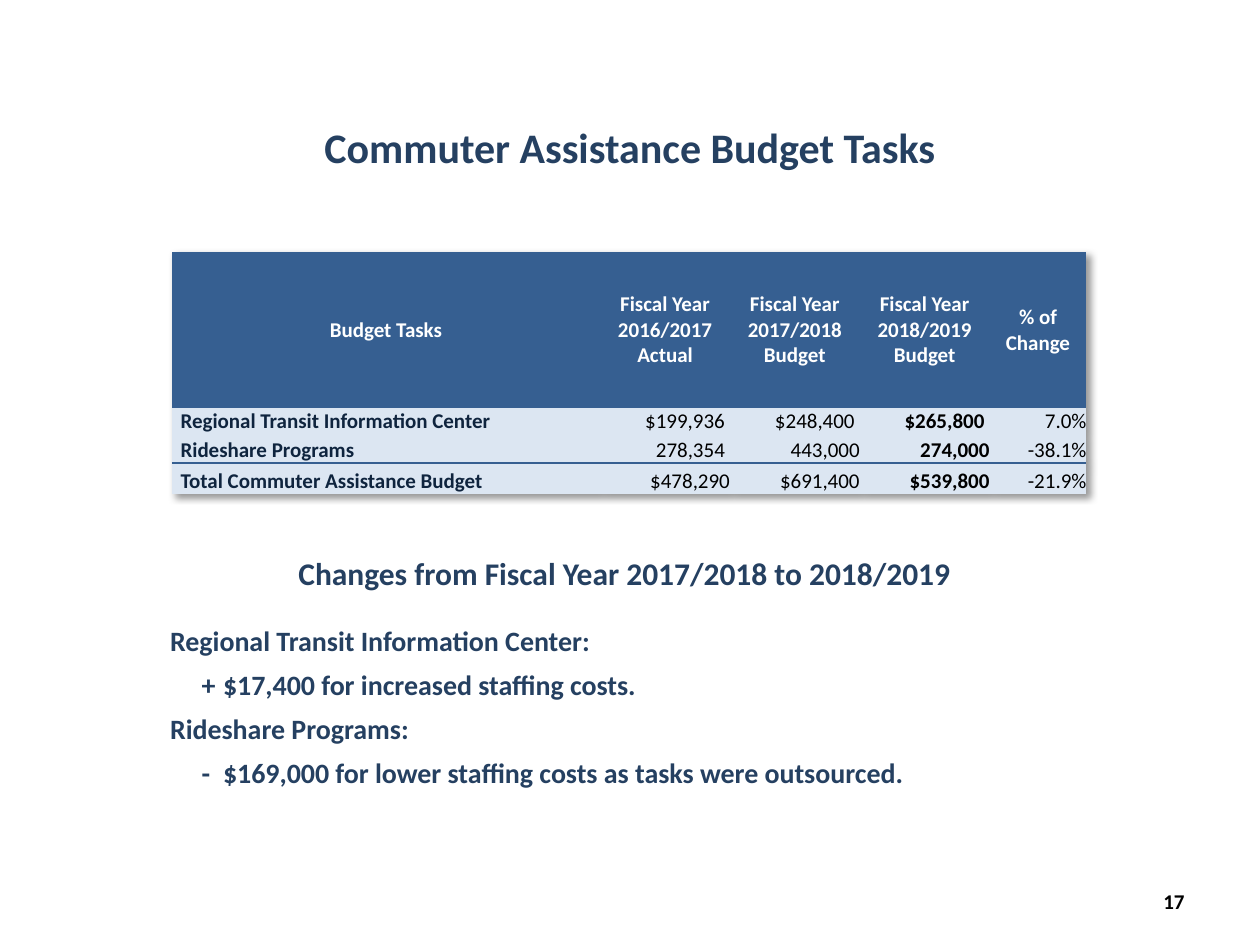
from dataclasses import dataclass

import pptx
import pptx.dml.color
import pptx.enum.text
import pptx.oxml
import pptx.oxml.ns
import pptx.util
from lxml import etree

RGBColor = pptx.dml.color.RGBColor
Align = pptx.enum.text.PP_ALIGN
Anchor = pptx.enum.text.MSO_ANCHOR

NAVY = RGBColor(0x25, 0x40, 0x61)
DARK_NAVY = RGBColor(0x0F, 0x24, 0x3E)
HEADER_BLUE = RGBColor(0x36, 0x5F, 0x91)
PALE_BLUE = RGBColor(0xDC, 0xE6, 0xF2)
WHITE = RGBColor(0xFF, 0xFF, 0xFF)
BLACK = RGBColor(0, 0, 0)

FONT = "Calibri"
SLIDE_WIDTH = pptx.util.Inches(10)
SLIDE_HEIGHT = pptx.util.Inches(7.5)
GRID_UNIT = SLIDE_WIDTH / 120  # 120 columns by 90 rows

COLUMN_WIDTHS = (40.8, 12.36, 12.36, 12.36, 9.24)
ROW_HEIGHTS = (14.88, 2.16, 2.76, 3)
NO_GRID_STYLE = "{2D5ABB26-0587-4C30-8999-92F81FD0307C}"
DRAWING = pptx.oxml.ns.nsdecls("a")


@dataclass(frozen=True)
class Box:
    """A position and size in grid columns and rows."""
    left: float
    top: float
    width: float
    height: float

    def lengths(self) -> list[int]:
        return [grid(value) for value in (self.left, self.top, self.width, self.height)]


@dataclass(frozen=True)
class TextStyle:
    size: float
    color: RGBColor
    bold: bool = True


@dataclass(frozen=True)
class BudgetRow:
    task: str
    amounts: tuple[str, str, str]
    change: str
    indented_amounts: int = 0  # leading amounts set in from the right edge


HEADERS = (
    ("Budget Tasks",),
    ("Fiscal Year 2016/2017", "Actual"),
    ("Fiscal Year 2017/2018", "Budget"),
    ("Fiscal Year 2018/2019", "Budget"),
    ("% of Change",),
)
BUDGET_ROWS = (
    BudgetRow("Regional Transit Information Center",
              ("$199,936", "$248,400", "$265,800"), "7.0%", 3),
    BudgetRow("Rideshare Programs", ("278,354", "443,000", "274,000"), "-38.1%", 1),
    BudgetRow("Total Commuter Assistance Budget",
              ("$478,290", "$691,400", "$539,800"), "-21.9%"),
)
CHANGES = (
    ("Regional Transit Information Center:", "+\t$17,400 for increased staffing costs."),
    ("Rideshare Programs:", "-\t$169,000 for lower staffing costs as tasks were outsourced."),
)


def grid(units: float) -> int:
    return round(units * GRID_UNIT)


def place(shape, box: Box) -> None:
    shape.left, shape.top, shape.width, shape.height = box.lengths()


def next_paragraph(text_frame, is_first: bool):
    return text_frame.paragraphs[0] if is_first else text_frame.add_paragraph()


def add_run(paragraph, text: str, style: TextStyle) -> None:
    run = paragraph.add_run()
    run.text = text
    run.font.name = FONT
    run.font.size = pptx.util.Pt(style.size)
    run.font.bold = style.bold
    run.font.color.rgb = style.color


def write_line(shape, text: str, style: TextStyle, alignment, anchor) -> None:
    text_frame = shape.text_frame
    text_frame.word_wrap = True
    text_frame.auto_size = pptx.enum.text.MSO_AUTO_SIZE.NONE
    text_frame.vertical_anchor = anchor
    paragraph = text_frame.paragraphs[0]
    paragraph.alignment = alignment
    add_run(paragraph, text, style)


def fill_cell(cell, lines: tuple[str, ...], style: TextStyle, fill: RGBColor,
              alignment, anchor, left: float = 0, right: float = 0) -> None:
    cell.fill.solid()
    cell.fill.fore_color.rgb = fill
    cell.vertical_anchor = anchor
    cell.margin_left, cell.margin_right = pptx.util.Inches(left), pptx.util.Inches(right)
    cell.margin_top = cell.margin_bottom = 0
    for index, line in enumerate(lines):
        paragraph = next_paragraph(cell.text_frame, index == 0)
        paragraph.alignment = alignment
        add_run(paragraph, line, style)


def add_border(cell, side: str) -> None:
    cell_properties = cell._tc.get_or_add_tcPr()
    cell_properties.insert(0, pptx.oxml.parse_xml(
        f'<a:{side} {DRAWING} w="{pptx.util.Pt(1.5)}"><a:solidFill>'
        f'<a:srgbClr val="{HEADER_BLUE}"/></a:solidFill></a:{side}>'))


def style_table(table) -> None:
    """Remove the banded style and give the table a soft shadow."""
    table.horz_banding = False
    properties = table._tbl.tblPr
    properties.find(pptx.oxml.ns.qn("a:tableStyleId")).text = NO_GRID_STYLE
    properties.insert(0, pptx.oxml.parse_xml(
        f'<a:effectLst {DRAWING}><a:outerShdw blurRad="50800" dist="38100" dir="2700000" '
        'algn="tl" rotWithShape="0"><a:srgbClr val="000000"><a:alpha val="40000"/>'
        '</a:srgbClr></a:outerShdw></a:effectLst>'))


def add_budget_table(slide) -> None:
    box = Box(16.36, 24, sum(COLUMN_WIDTHS), sum(ROW_HEIGHTS))
    table = slide.shapes.add_table(len(ROW_HEIGHTS), len(COLUMN_WIDTHS), *box.lengths()).table
    style_table(table)
    for column, width in zip(table.columns, COLUMN_WIDTHS):
        column.width = grid(width)
    for row, height in zip(table.rows, ROW_HEIGHTS):
        row.height = grid(height)

    for column, lines in enumerate(HEADERS):
        fill_cell(table.cell(0, column), lines, TextStyle(12, WHITE), HEADER_BLUE,
                  Align.CENTER, Anchor.MIDDLE, 0.07, 0.07)
    for row, budget in enumerate(BUDGET_ROWS, start=1):
        fill_cell(table.cell(row, 0), (budget.task,), TextStyle(12, DARK_NAVY), PALE_BLUE,
                  Align.LEFT, Anchor.BOTTOM, 0.07, 0.07)
        for column, value in enumerate((*budget.amounts, budget.change), start=1):
            inset = 0.04 if column <= budget.indented_amounts else 0
            fill_cell(table.cell(row, column), (value,), TextStyle(12, BLACK, column == 3),
                      PALE_BLUE, Align.RIGHT, Anchor.BOTTOM, right=inset)

    total_row = len(BUDGET_ROWS)
    for column in range(len(COLUMN_WIDTHS)):
        add_border(table.cell(total_row - 1, column), "lnB")
        add_border(table.cell(total_row, column), "lnT")


def write_changes(body) -> None:
    text_frame = body.text_frame
    text_frame.word_wrap = True
    text_frame.auto_size = pptx.enum.text.MSO_AUTO_SIZE.NONE
    lines = [(text, level) for group in CHANGES for level, text in enumerate(group)]
    for index, (text, level) in enumerate(lines):
        paragraph = next_paragraph(text_frame, index == 0)
        properties = paragraph._p.get_or_add_pPr()
        properties.set("marL", str(pptx.util.Inches(0.42 * level)))
        properties.set("indent", str(pptx.util.Inches(-0.17 * level)))
        etree.SubElement(properties, pptx.oxml.ns.qn("a:buNone"))
        paragraph.space_before = pptx.util.Pt(6 if index else 0)
        add_run(paragraph, text, TextStyle(16, NAVY))


def main() -> None:
    presentation = pptx.Presentation()
    presentation.slide_width, presentation.slide_height = SLIDE_WIDTH, SLIDE_HEIGHT
    slide = presentation.slides.add_slide(presentation.slide_layouts[1])

    title, body = slide.placeholders
    place(title, Box(22, 11, 76, 6))
    write_line(title, "Commuter Assistance Budget Tasks", TextStyle(24, NAVY),
               Align.CENTER, Anchor.TOP)
    add_budget_table(slide)

    page_number = slide.shapes.add_textbox(*Box(86, 83.4, 28, 4.8).lengths())
    write_line(page_number, "17", TextStyle(12, BLACK), Align.RIGHT, Anchor.MIDDLE)

    place(body, Box(15, 58.8, 90, 17.2))
    write_changes(body)

    subtitle = slide.shapes.add_textbox(*Box(11, 52.2, 97, 4.8).lengths())
    write_line(subtitle, "Changes from Fiscal Year 2017/2018 to 2018/2019",
               TextStyle(18, NAVY), Align.CENTER, Anchor.TOP)
    presentation.save("out.pptx")


if __name__ == "__main__":
    main()
